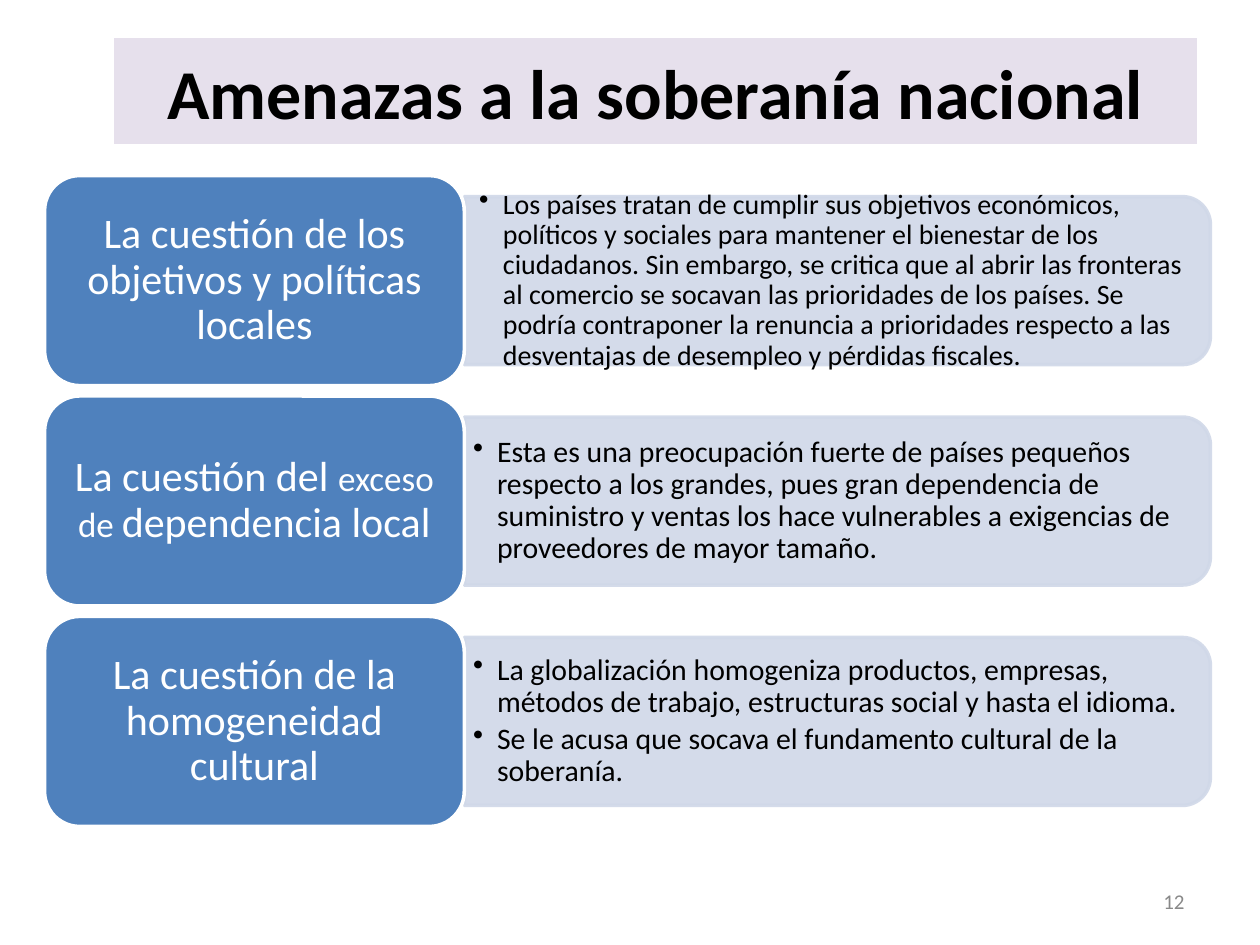
from lxml import etree
from pptx import Presentation
from pptx.dml.color import RGBColor
from pptx.enum.shapes import MSO_SHAPE
from pptx.enum.text import MSO_ANCHOR, PP_ALIGN
from pptx.oxml.ns import qn
from pptx.util import Cm, Pt

RECTANGLE = MSO_SHAPE.RECTANGLE
ROUNDED = MSO_SHAPE.ROUNDED_RECTANGLE
ROUNDED_TOP = MSO_SHAPE.ROUND_2_SAME_RECTANGLE
MIDDLE = MSO_ANCHOR.MIDDLE
LEFT, CENTER, RIGHT = PP_ALIGN.LEFT, PP_ALIGN.CENTER, PP_ALIGN.RIGHT

BLACK = RGBColor(0x00, 0x00, 0x00)
WHITE = RGBColor(0xFF, 0xFF, 0xFF)
GRAY = RGBColor(0x89, 0x89, 0x89)
LILAC = RGBColor(0xE6, 0xE0, 0xEC)
BLUE = RGBColor(0x4F, 0x81, 0xBD)
PALE_BLUE = RGBColor(0xD0, 0xD8, 0xE8)

ROWS = [
    {
        "heading": [("La cuestión de los objetivos y políticas locales", 24)],
        "details": [
            "Los países tratan de cumplir sus objetivos económicos, políticos y sociales "
            "para mantener el bienestar de los ciudadanos. Sin embargo, se critica que al "
            "abrir las fronteras al comercio se socavan las prioridades de los países. Se "
            "podría contraponer la renuncia a prioridades respecto a las desventajas de "
            "desempleo y pérdidas fiscales."
        ],
        "size": 16,
        "insets": (0.3, 0.15),
    },
    {
        "heading": [
            ("La cuestión del ", 24),
            ("exceso", 20),
            (" ", 24),
            ("de ", 20),
            ("dependencia local", 24),
        ],
        "details": [
            "Esta es una preocupación fuerte de países pequeños respecto a los grandes, "
            "pues gran dependencia de suministro y ventas los hace vulnerables a "
            "exigencias de proveedores de mayor tamaño."
        ],
        "size": 17,
        "insets": (0.18, 0.1),
    },
    {
        "heading": [("La cuestión de la homogeneidad cultural", 24)],
        "details": [
            "La globalización homogeniza productos, empresas, métodos de trabajo, "
            "estructuras social y hasta el idioma.",
            "Se le acusa que socava el fundamento cultural de la soberanía.",
        ],
        "size": 17,
        "insets": (0.18, 0.1),
    },
]


def apply_format(target, values):
    for name, value in values.items():
        setattr(target, name, value)


def write_runs(paragraph, runs, color, align, **paragraph_format):
    apply_format(paragraph, {"alignment": align, **paragraph_format})
    for text, size in runs:
        run = paragraph.add_run()
        run.text = text
        apply_format(run.font, {"name": "Calibri", "size": Pt(size)})
        run.font.color.rgb = color


def add_filled_shape(slide, kind, box, fill, line=None):
    shape = slide.shapes.add_shape(kind, *map(Cm, box))
    shape.shadow.inherit = False
    shape.fill.solid()
    shape.fill.fore_color.rgb = fill
    if line is None:
        shape.line.fill.background()
    else:
        shape.line.color.rgb = line
        shape.line.width = Pt(2)
    apply_format(shape.text_frame, {"word_wrap": True, "vertical_anchor": MIDDLE})
    return shape


def add_text_box(slide, box):
    frame = slide.shapes.add_textbox(*map(Cm, box)).text_frame
    apply_format(frame, {"word_wrap": True, "vertical_anchor": MIDDLE})
    return frame


def add_title(slide, box, text):
    shape = add_filled_shape(slide, RECTANGLE, box, LILAC)
    paragraph = shape.text_frame.paragraphs[0]
    write_runs(paragraph, [(text, 40)], BLACK, CENTER)
    paragraph.font.bold = True
    paragraph.runs[0].font.bold = True


def add_detail_panel(slide, box):
    left, top, width, height = box
    shift = (width - height) / 2
    upright = (left + shift, top - shift, height, width)
    panel = add_filled_shape(slide, ROUNDED_TOP, upright, PALE_BLUE, PALE_BLUE)
    panel.rotation = 90
    for color in panel._element.spPr.iter(qn("a:srgbClr")):
        etree.SubElement(color, qn("a:alpha"), val="90000")


def add_bullets(slide, box, texts, size, insets):
    frame = add_text_box(slide, box)
    side, edge = map(Cm, insets)
    apply_format(frame, {"margin_left": side, "margin_right": side,
                         "margin_top": edge, "margin_bottom": edge})
    for index, text in enumerate(texts):
        paragraph = frame.add_paragraph() if index else frame.paragraphs[0]
        write_runs(paragraph, [(text, size)], BLACK, LEFT,
                   line_spacing=0.9, space_after=Pt(3))
        properties = paragraph._p.get_or_add_pPr()
        properties.set("marL", str(Cm(0.48)))
        properties.set("indent", str(-Cm(0.48)))
        etree.SubElement(properties, qn("a:buChar"), char="•")


def add_row(slide, box, row):
    left, top, width, height = box
    heading_width = 8.46
    panel_left = left + heading_width
    panel_width = width - heading_width
    panel_height = height * 0.8
    add_detail_panel(slide, (panel_left, top + height * 0.1, panel_width, panel_height))
    text_box = (panel_left, top + 0.6, panel_width - 0.18, height - 1.2)
    add_bullets(slide, text_box, row["details"], row["size"], row["insets"])
    heading = add_filled_shape(slide, ROUNDED, (left, top, heading_width, height), BLUE, WHITE)
    write_runs(heading.text_frame.paragraphs[0], row["heading"], WHITE, CENTER,
               line_spacing=0.9)


def add_row_list(slide, box, rows, gap):
    left, top, width, height = box
    row_height = (height - gap * (len(rows) - 1)) / len(rows)
    for index, row in enumerate(rows):
        row_top = top + index * (row_height + gap)
        add_row(slide, (left, row_top, width, row_height), row)


def add_page_number(slide, box, number):
    frame = add_text_box(slide, box)
    write_runs(frame.paragraphs[0], [(number, 12)], GRAY, RIGHT)


def main():
    presentation = Presentation()
    apply_format(presentation, {"slide_width": Cm(25.4), "slide_height": Cm(19.05)})
    slide = presentation.slides.add_slide(presentation.slide_layouts[6])
    add_title(slide, (2.3, 0.77, 21.83, 2.13), "Amenazas a la soberanía nacional")
    add_row_list(slide, (0.9, 3.54, 23.5, 13.12), ROWS, 0.21)
    add_page_number(slide, (18.2, 17.66, 5.93, 1.01), "12")
    presentation.save("out.pptx")


if __name__ == "__main__":
    main()
